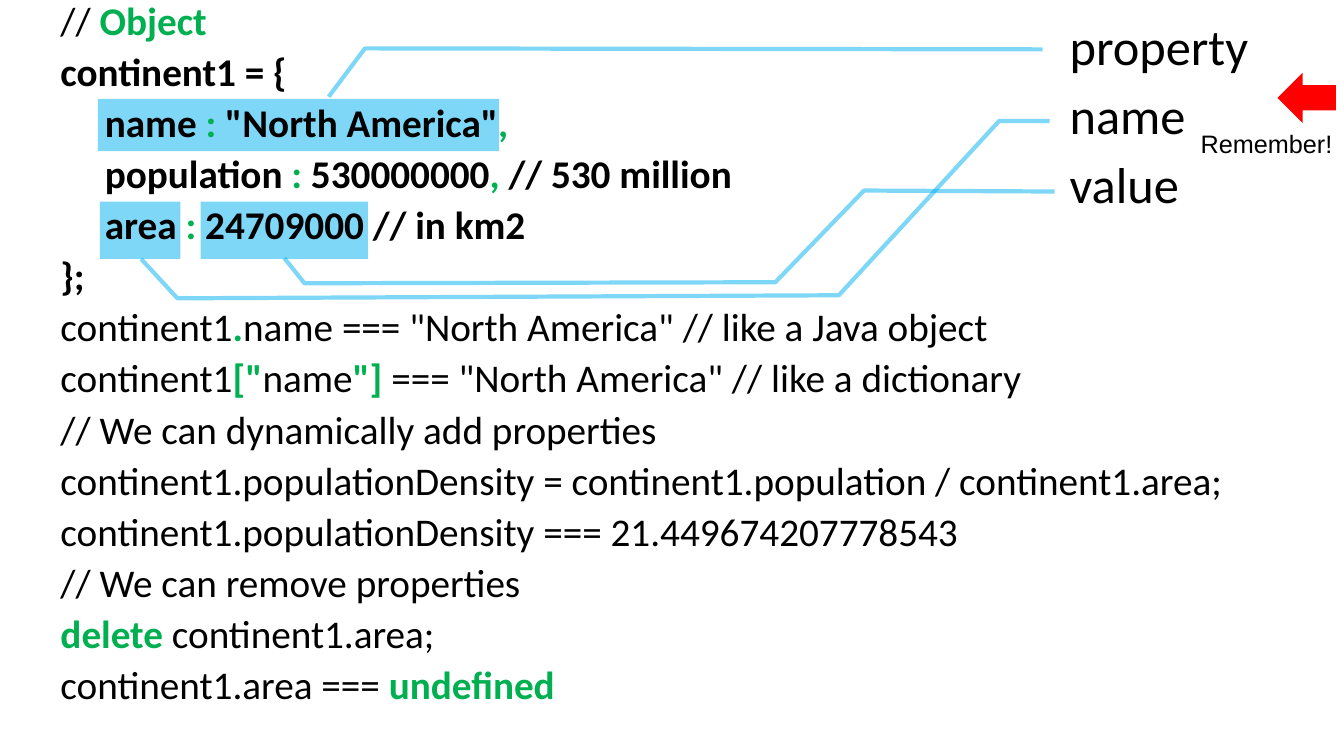
from dataclasses import dataclass

from lxml import etree
from pptx import Presentation
from pptx.dml.color import RGBColor
from pptx.enum.shapes import MSO_SHAPE
from pptx.enum.text import MSO_ANCHOR, MSO_AUTO_SIZE
from pptx.oxml.ns import qn
from pptx.util import Inches, Pt

RECTANGLE = MSO_SHAPE.RECTANGLE
RIGHT_ARROW = MSO_SHAPE.RIGHT_ARROW
TOP = MSO_ANCHOR.TOP
NO_AUTOFIT = MSO_AUTO_SIZE.NONE


@dataclass(frozen=True)
class Theme:
    text: RGBColor = RGBColor(0x00, 0x00, 0x00)
    keyword: RGBColor = RGBColor(0x00, 0xB0, 0x50)
    highlight: RGBColor = RGBColor(0x00, 0xB0, 0xF0)
    alert: RGBColor = RGBColor(0xFF, 0x00, 0x00)
    code_font: str = "Calibri"
    note_font: str = "Arial"
    code_size: int = 28
    label_size: int = 36
    note_size: int = 18
    highlight_opacity: int = 50
    callout_width: int = 3


THEME = Theme()
PLAIN, BOLD, KEYWORD = "plain", "bold", "keyword"

# Each line: indented or not, then its runs as (text, style)
CODE_LINES = [
    (False, [("// ", PLAIN), ("Object", KEYWORD)]),
    (False, [("continent1 = {", BOLD)]),
    (True, [("name ", BOLD), (":", KEYWORD), (' "North America"', BOLD), (",", KEYWORD)]),
    (True, [("population ", BOLD), (":", KEYWORD), (" 530000000", BOLD), (",", KEYWORD),
            (" // 530 million", BOLD)]),
    (True, [("area ", BOLD), (":", KEYWORD), (" 24709000 // in km2", BOLD)]),
    (False, [("};", BOLD)]),
    (False, [("continent1", PLAIN), (".", KEYWORD),
             ('name === "North America" // like a Java object', PLAIN)]),
    (False, [("continent1", PLAIN), ('["', KEYWORD), ("name", PLAIN), ('"]', KEYWORD),
             (' === "North America" // like a dictionary', PLAIN)]),
    (False, [("// We can dynamically add properties", PLAIN)]),
    (False, [("continent1.populationDensity = continent1.population / continent1.area;", PLAIN)]),
    (False, [("continent1.populationDensity === 21.449674207778543", PLAIN)]),
    (False, [("// We can remove properties", PLAIN)]),
    (False, [("delete", KEYWORD), (" continent1.area;", PLAIN)]),
    (False, [("continent1.area === ", PLAIN), ("undefined", KEYWORD)]),
]
CODE_BOX = (0.5, 0, 12.33, 7.5)
CODE_INDENT = 0.44

HIGHLIGHTS = [(0.97, 0.98, 3.98, 0.52), (0.99, 2, 0.8, 0.57), (1.99, 2, 1.66, 0.57)]
LABELS = ["property", "name", "value"]
LABEL_LEFT, LABEL_TOP, LABEL_PITCH = 10.51, 0.1, 0.685
LABEL_WIDTH, LABEL_HEIGHT = 2.21, 0.71
CALLOUTS = [
    [(3.26, 0.96), (3.62, 0.48), (10.34, 0.49)],
    [(2.82, 2.56), (3.02, 2.81), (7.69, 2.8), (8.57, 1.89), (10.46, 1.9)],
    [(1.4, 2.57), (1.76, 2.96), (8.32, 2.93), (9.91, 1.2), (10.41, 1.2)],
]
ARROW_BOX = (12.67, 0.72, 0.58, 0.5)
NOTE, NOTE_BOX = "Remember!", (11.81, 1.22, 1.52, 0.4)


def inches(box):
    return [Inches(value) for value in box]


def make_translucent(shape):
    """Apply the highlight opacity to the shape's solid fill or line colour."""
    color = next(shape._element.spPr.iter(qn("a:srgbClr")))
    alpha = etree.SubElement(color, qn("a:alpha"))
    alpha.set("val", str(THEME.highlight_opacity * 1000))


def add_run(paragraph, text, font, size, color=THEME.text, bold=False):
    run = paragraph.add_run()
    run.text = text
    run.font.name = font
    run.font.size = Pt(size)
    run.font.color.rgb = color
    run.font.bold = bold


def add_filled_shape(slide, preset, box, color):
    shape = slide.shapes.add_shape(preset, *inches(box))
    shape.shadow.inherit = False
    shape.fill.solid()
    shape.fill.fore_color.rgb = color
    shape.line.fill.background()
    return shape


def add_label(slide, text, box, font, size):
    text_frame = slide.shapes.add_textbox(*inches(box)).text_frame
    text_frame.word_wrap = True
    add_run(text_frame.paragraphs[0], text, font, size)


def add_callout(slide, points):
    start, *rest = [tuple(inches(point)) for point in points]
    builder = slide.shapes.build_freeform(*start)
    builder.add_line_segments(rest, close=False)
    shape = builder.convert_to_shape()
    shape.shadow.inherit = False
    shape.fill.background()
    shape.line.color.rgb = THEME.highlight
    shape.line.width = Pt(THEME.callout_width)
    make_translucent(shape)


def fill_code(body):
    body.left, body.top, body.width, body.height = inches(CODE_BOX)
    text_frame = body.text_frame
    text_frame.word_wrap = True
    text_frame.auto_size = NO_AUTOFIT
    text_frame.vertical_anchor = TOP
    for index, (indented, runs) in enumerate(CODE_LINES):
        paragraph = text_frame.add_paragraph() if index else text_frame.paragraphs[0]
        paragraph.line_spacing = 0.8
        paragraph.space_before = Pt(9.6)
        properties = paragraph._p.get_or_add_pPr()
        properties.set("marL", str(Inches(CODE_INDENT if indented else 0)))
        properties.set("indent", "0")
        etree.SubElement(properties, qn("a:buNone"))
        for text, style in runs:
            color = THEME.keyword if style == KEYWORD else THEME.text
            add_run(paragraph, text, THEME.code_font, THEME.code_size, color, style != PLAIN)


def main():
    presentation = Presentation()
    presentation.slide_width, presentation.slide_height = Inches(13.33), Inches(7.5)
    slide = presentation.slides.add_slide(presentation.slide_layouts[1])
    title, body = slide.placeholders
    title._element.getparent().remove(title._element)

    for box in HIGHLIGHTS:
        make_translucent(add_filled_shape(slide, RECTANGLE, box, THEME.highlight))
    for row, label in enumerate(LABELS):
        box = (LABEL_LEFT, LABEL_TOP + row * LABEL_PITCH, LABEL_WIDTH, LABEL_HEIGHT)
        add_label(slide, label, box, THEME.code_font, THEME.label_size)
    for points in CALLOUTS:
        add_callout(slide, points)

    fill_code(body)
    slide.shapes._spTree.append(body._element)  # code sits in front of its highlights

    arrow = add_filled_shape(slide, RIGHT_ARROW, ARROW_BOX, THEME.alert)
    arrow.rotation = 180
    add_label(slide, NOTE, NOTE_BOX, THEME.note_font, THEME.note_size)
    presentation.save("out.pptx")


if __name__ == "__main__":
    main()
